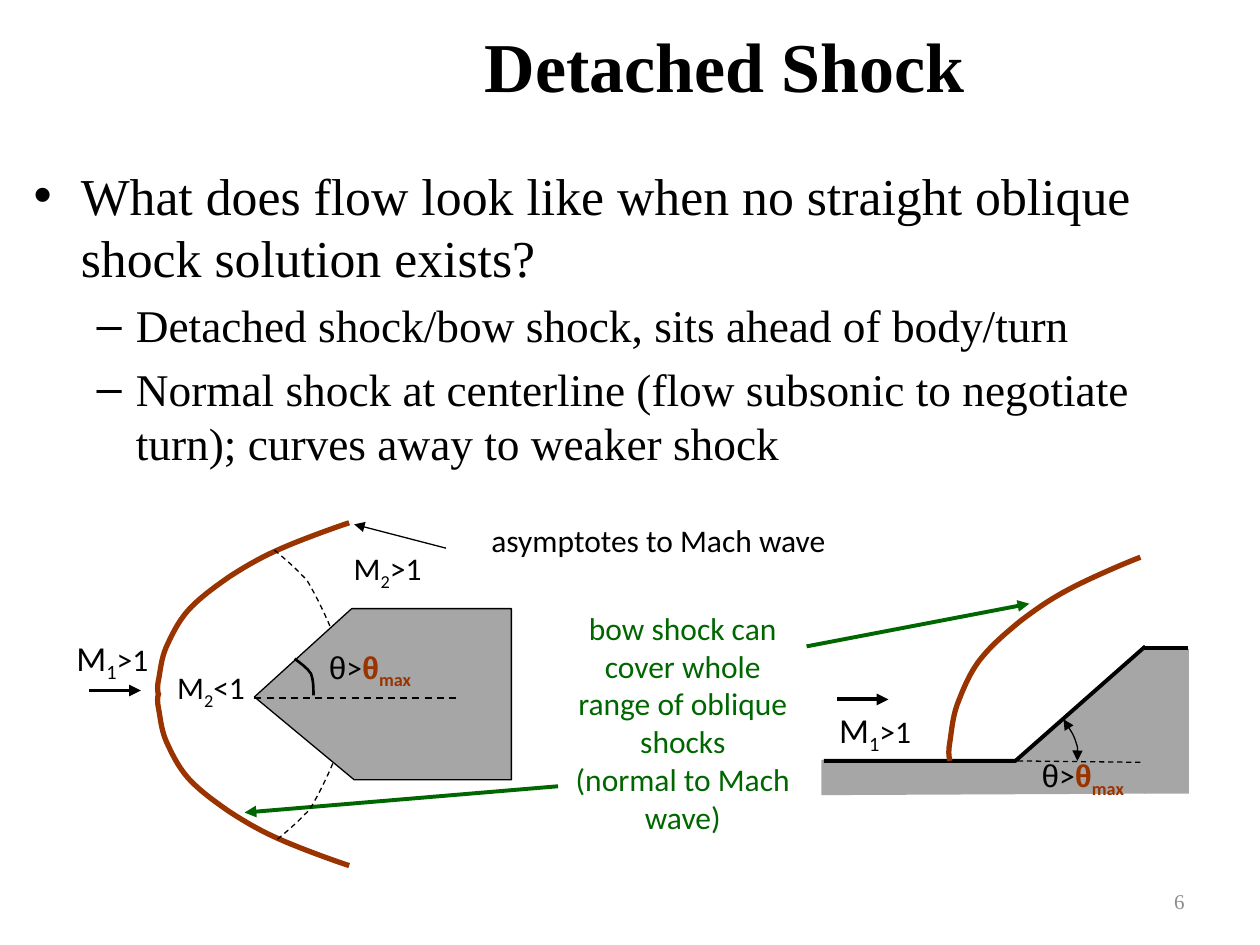
from lxml import etree
from pptx import Presentation
from pptx.dml.color import RGBColor
from pptx.enum.dml import MSO_LINE
from pptx.enum.shapes import MSO_CONNECTOR, MSO_SHAPE
from pptx.enum.text import MSO_ANCHOR, PP_ALIGN
from pptx.oxml.ns import qn
from pptx.util import Cm, Pt

LEFT, CENTER, RIGHT = PP_ALIGN.LEFT, PP_ALIGN.CENTER, PP_ALIGN.RIGHT
TOP, MIDDLE = MSO_ANCHOR.TOP, MSO_ANCHOR.MIDDLE
STRAIGHT, RECTANGLE, DASH = MSO_CONNECTOR.STRAIGHT, MSO_SHAPE.RECTANGLE, MSO_LINE.DASH
SERIF, SANS, GREEK = "Times New Roman", "Calibri", "Arial"
BLACK, GRAY, PALE, RUST, GREEN = "000000", "A6A6A6", "8C8C8C", "993300", "006600"

BOW_SHOCK = [(-0.03, 0.1), (-0.03, 0.18), (0, 0.33), (0.03, 0.48), (0.05, 0.74), (0.15, 0.97),
             (0.25, 1.19), (0.38, 1.47), (0.58, 1.7), (0.81, 1.96), (1.12, 2.18), (1.42, 2.39),
             (1.73, 2.59), (2.03, 2.77), (2.44, 2.95), (2.82, 3.12), (3.53, 3.38), (3.84, 3.48)]
SONIC_LINE = [(-0.05, 0.13), (-0.23, 0.51), (-0.33, 0.69), (-0.43, 0.86), (-0.43, 0.91),
              (-0.58, 1.04), (-0.71, 1.19), (-1.02, 1.45), (-1.14, 1.55)]
WEDGE_ARC = [(0.13, 0.1), (0.25, 0.18), (0.33, 0.3), (0.38, 0.43), (0.38, 0.58), (0.38, 0.74)]
RAMP_ARC = [(0.05, 0.08), (0.2, 0.3), (0.25, 0.46), (0.3, 0.61), (0.28, 0.76), (0.28, 0.84)]


def rgb(code):
    """Turn a hex string into a colour."""
    return RGBColor.from_string(code)


def mach(index, relation, size=18):
    """Return the runs of a Mach number label."""
    return [("M", dict(size=size)), (index, dict(size=size, sub=True)), (relation, {})]


class Sketch:
    """Hold the slide and draw styled elements on it, in centimetres."""

    def __init__(self, slide):
        """Keep the slide to draw on."""
        self.slide = slide

    def add_run(self, paragraph, text, size=18, font=SANS, color=BLACK, bold=False, sub=False):
        """Add one styled run."""
        run = paragraph.add_run()
        run.text = text
        run.font.size, run.font.name, run.font.bold = Pt(size), font, bold
        run.font.color.rgb = rgb(color)
        if sub:
            run.font._element.set("baseline", "-25000")

    def box(self, left, top, width, height, anchor=TOP):
        """Add an empty text box and return its frame."""
        frame = self.slide.shapes.add_textbox(Cm(left), Cm(top), Cm(width), Cm(height)).text_frame
        frame.word_wrap, frame.vertical_anchor = True, anchor
        return frame

    def label(self, place, runs, align=CENTER, anchor=TOP):
        """Add a one-paragraph label; a run of None breaks the line."""
        paragraph = self.box(*place, anchor).paragraphs[0]
        paragraph.alignment = align
        for text, style in runs:
            if text is None:
                paragraph.add_line_break()
            else:
                self.add_run(paragraph, text, **style)

    def bullets(self, place, items):
        """Add a bulleted list of (text, mark, size, margin, hanging) items."""
        frame = self.box(*place)
        for number, (text, mark, size, margin, hanging) in enumerate(items):
            paragraph = frame.add_paragraph() if number else frame.paragraphs[0]
            properties = paragraph._p.get_or_add_pPr()
            properties.set("marL", str(Cm(margin)))
            properties.set("indent", str(-Cm(hanging)))
            etree.SubElement(properties, qn("a:buFont")).set("typeface", GREEK)
            etree.SubElement(properties, qn("a:buChar")).set("char", mark)
            if number:
                paragraph.space_before = Pt(0.2 * size)
            self.add_run(paragraph, text, size, SERIF)

    def stroke(self, shape, color, width, dashed=False, ends=()):
        """Style a line and add the named arrowheads."""
        shape.line.color.rgb, shape.line.width = rgb(color), Pt(width)
        if dashed:
            shape.line.dash_style = DASH
        for end in ends:
            etree.SubElement(shape._element.spPr.find(qn("a:ln")), qn(f"a:{end}")).set("type", "triangle")

    def line(self, start, end, color=BLACK, width=2.25, dashed=False, ends=()):
        """Add a straight line."""
        connector = self.slide.shapes.add_connector(STRAIGHT, *map(Cm, start + end))
        self.stroke(connector, color, width, dashed, ends)
        etree.SubElement(connector._element.spPr, qn("a:effectLst"))

    def arrow(self, start, end, color=BLACK, width=2.25):
        """Add a straight arrow."""
        self.line(start, end, color, width, ends=("tailEnd",))

    def paint(self, shape, fill):
        """Fill a shape, or leave it empty, without a shadow."""
        shape.shadow.inherit = False
        if fill:
            shape.fill.solid()
            shape.fill.fore_color.rgb = rgb(fill)
        else:
            shape.fill.background()

    def outline(self, points, fill=None, color=BLACK, width=0, dashed=False, ends=()):
        """Add a freeform through points, closed when it is filled, and return it."""
        corners = [(Cm(x), Cm(y)) for x, y in points]
        builder = self.slide.shapes.build_freeform(*corners[0])
        builder.add_line_segments(corners[1:], close=bool(fill))
        shape = builder.convert_to_shape()
        self.paint(shape, fill)
        if width:
            self.stroke(shape, color, width, dashed, ends)
        else:
            shape.line.fill.background()
        return shape

    def curve(self, start, offsets, rise, **style):
        """Add an open cubic curve from offsets to start, with y scaled by rise."""
        points = [start] + [(start[0] + dx, start[1] - rise * dy) for dx, dy in offsets]
        segments = list(self.outline(points, **style)._element.iter(qn("a:lnTo")))
        for first in range(0, len(segments), 3):
            bend = etree.Element(qn("a:cubicBezTo"))
            segments[first].addprevious(bend)
            for segment in segments[first:first + 3]:
                bend.append(segment[0])
                segment.getparent().remove(segment)

    def block(self, left, top, width, height, fill):
        """Add a plain filled rectangle."""
        shape = self.slide.shapes.add_shape(RECTANGLE, Cm(left), Cm(top), Cm(width), Cm(height))
        self.paint(shape, fill)
        shape.line.fill.background()


def main():
    """Build the slide and save it."""
    deck = Presentation()
    deck.slide_width, deck.slide_height = Cm(25.4), Cm(19.05)
    sketch = Sketch(deck.slides.add_slide(deck.slide_layouts[6]))
    turn_angle = [("θ", dict(font=GREEK)), (">", {}), ("θ", dict(font=GREEK, color=RUST, bold=True)),
                  ("max", dict(color=RUST, bold=True, sub=True))]
    green = dict(color=GREEN)

    sketch.label((5.08, 0.38, 19.05, 1.85), [("Detached Shock", dict(size=40, font=SERIF, bold=True))],
                 anchor=MIDDLE)
    sketch.bullets((0.43, 3.18, 24.56, 6.35), [
        ("What does flow look like when no straight oblique shock solution exists?", "•", 29.6, 0.95, 0.95),
        ("Detached shock/bow shock, sits ahead of body/turn", "–", 25.9, 2.06, 0.79),
        ("Normal shock at centerline (flow subsonic to negotiate turn); curves away to weaker shock",
         "–", 25.9, 2.06, 0.79)])
    sketch.label((18.21, 17.65, 5.92, 1.02), [("6", dict(size=12, font=SERIF, color=PALE))], RIGHT, MIDDLE)

    sketch.outline([(16.56, 15.32), (20.47, 15.32), (23.09, 13.06), (23.09, 16), (16.56, 16.03)], GRAY)
    sketch.label((16.46, 14.15, 2.36, 1.12), mach("1", ">1", 20))
    sketch.curve((21.44, 14.5), RAMP_ARC, -1, width=0.75, ends=("headEnd", "tailEnd"))
    sketch.outline([(16.61, 15.34), (20.47, 15.34), (23.09, 13.03)], width=2.25)
    sketch.outline([(20.52, 15.34), (23.14, 15.37)], width=0.75, dashed=True)
    sketch.label((20.75, 15.11, 2.26, 1.02), turn_angle, LEFT)
    sketch.arrow((16.87, 14.1), (17.91, 14.1))

    sketch.label((11.2, 12.15, 5.13, 4.88), [("bow shock can cover whole range of oblique shocks", green),
                                             (None, {}), ("(normal to Mach wave)", green)])
    sketch.arrow((11.25, 15.85), (4.93, 16.38), GREEN)
    sketch.arrow((16.26, 13.03), (20.75, 12.17), GREEN)
    sketch.arrow((8.99, 11.05), (7.14, 10.57), width=0.75)
    sketch.label((8.92, 10.38, 8.71, 1.02), [("asymptotes to Mach wave", {})])

    for nose, rise in (((19.15, 15.34), 1.18), ((3.2, 14.02), 1), ((3.2, 13.97), -1)):
        sketch.curve(nose, BOW_SHOCK, rise, color=RUST, width=3)
    sketch.label((3.25, 13.34, 2.01, 1.02), mach("2", "<1"))
    sketch.label((6.81, 10.95, 2.01, 1.02), mach("2", ">1"))
    for shoulder, rise in (((6.71, 15.39), -1), ((6.65, 12.62), 1)):
        sketch.curve(shoulder, SONIC_LINE, rise, width=0.75, dashed=True)

    sketch.arrow((1.8, 13.92), (2.84, 13.92))
    sketch.label((0.79, 12.7, 2.95, 1.12), mach("1", ">1", 20))
    sketch.outline([(5.13, 14.05), (7.09, 12.27), (10.31, 12.27), (10.31, 15.72), (7.14, 15.72)],
                   GRAY, width=0.75)
    sketch.label((6.38, 12.93, 2.44, 1.02), turn_angle, LEFT)
    sketch.curve((5.94, 13.28), WEDGE_ARC, -1, width=1.5)
    sketch.line((5.13, 14.07), (9.25, 14.07), width=1, dashed=True)

    sketch.block(23.06, 13.08, 0.91, 2.92, GRAY)
    sketch.line((23.06, 13.06), (23.95, 13.06))
    deck.save("out.pptx")


if __name__ == "__main__":
    main()
